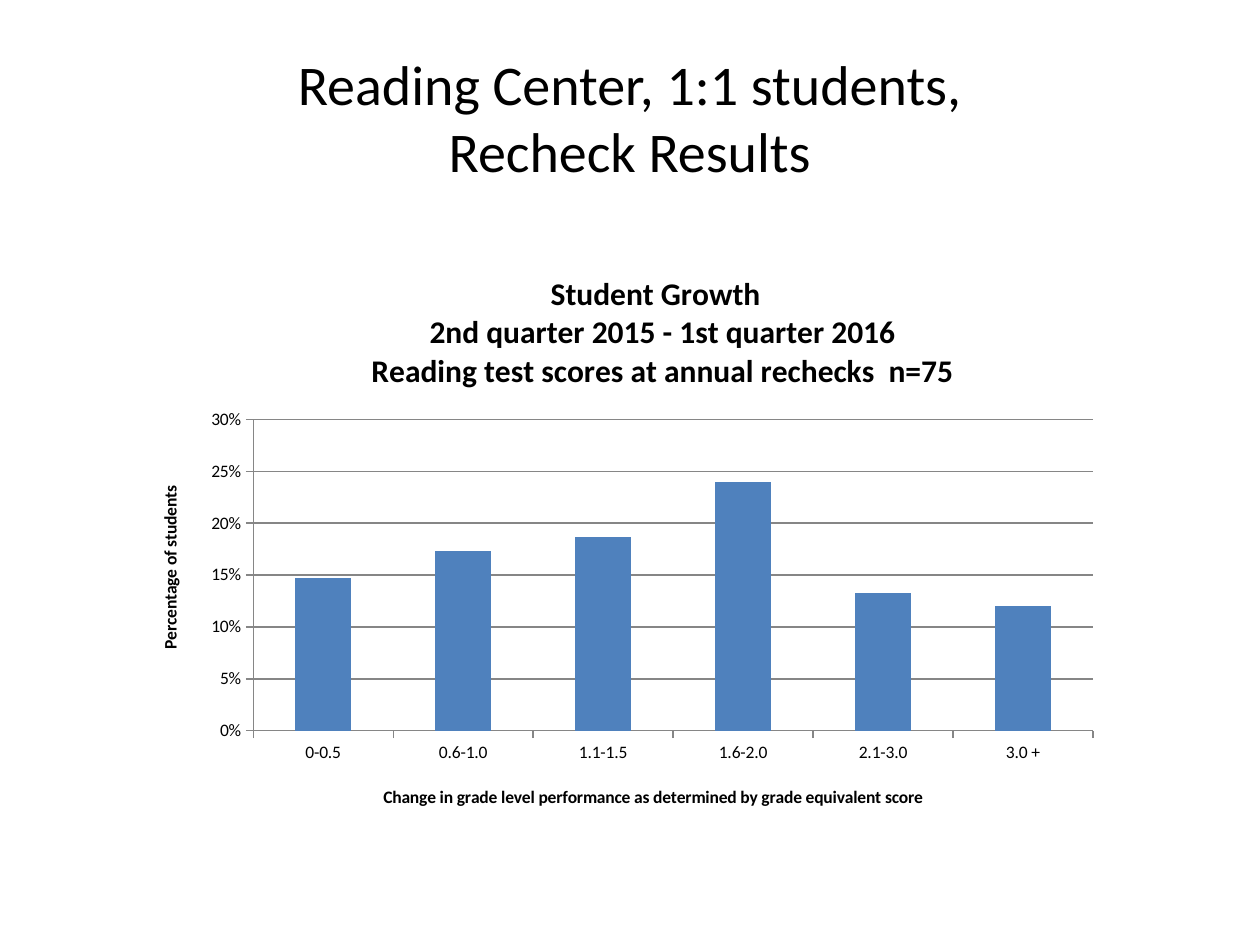
from lxml import etree
from pptx import Presentation
from pptx.chart.data import CategoryChartData
from pptx.dml.color import RGBColor
from pptx.enum.chart import XL_CHART_TYPE, XL_TICK_MARK
from pptx.enum.text import MSO_ANCHOR, PP_ALIGN
from pptx.oxml.ns import qn
from pptx.util import Inches, Pt

FONT = "Calibri"
BLACK = RGBColor(0x00, 0x00, 0x00)
BLUE = RGBColor(0x4F, 0x81, 0xBD)
GRAY = RGBColor(0x86, 0x86, 0x86)

HEADING = ["Reading Center, 1:1 students,", "Recheck Results"]
CHART_TITLE = [
    "Student Growth ",
    " 2nd quarter 2015 - 1st quarter 2016",
    " Reading test scores at annual rechecks  n=75",
]
X_TITLE = "Change in grade level performance as determined by grade equivalent score"
Y_TITLE = "Percentage of students"
GROWTH = {
    "0-0.5": 0.147,
    "0.6-1.0": 0.173,
    "1.1-1.5": 0.187,
    "1.6-2.0": 0.24,
    "2.1-3.0": 0.133,
    "3.0 +": 0.12,
}


def style(font, size, bold=False):
    font.name, font.size, font.bold = FONT, Pt(size), bold
    font.color.rgb = BLACK


def write(tf, lines, size, bold=False):
    for i, line in enumerate(lines):
        p = tf.add_paragraph() if i else tf.paragraphs[0]
        p.alignment = PP_ALIGN.CENTER
        r = p.add_run()
        r.text = line
        style(r.font, size, bold)


def place(parent, index, **fractions):
    """Give a chart part a manual layout, in fractions of the chart's size."""
    for old in parent.findall(qn("c:layout")):
        parent.remove(old)
    layout = etree.Element(qn("c:layout"))
    manual = etree.SubElement(layout, qn("c:manualLayout"))
    if "w" in fractions:
        etree.SubElement(manual, qn("c:layoutTarget"), val="inner")
    for mode in ("xMode", "yMode"):
        etree.SubElement(manual, qn("c:" + mode), val="edge")
    for key, value in fractions.items():
        etree.SubElement(manual, qn("c:" + key), val=str(value))
    parent.insert(index, layout)


prs = Presentation()
prs.slide_width, prs.slide_height = Inches(10), Inches(7.5)
s = prs.slides.add_slide(prs.slide_layouts[6])

heading = s.shapes.add_textbox(Inches(0.5), Inches(0.3), Inches(9), Inches(1.25))
heading.text_frame.word_wrap = True
heading.text_frame.vertical_anchor = MSO_ANCHOR.MIDDLE
write(heading.text_frame, HEADING, 32)

data = CategoryChartData(number_format="0%")
data.categories = list(GROWTH)
data.add_series("Series 1", list(GROWTH.values()))
chart = s.shapes.add_chart(XL_CHART_TYPE.COLUMN_CLUSTERED, Inches(1.08), Inches(2),
                           Inches(7.75), Inches(4.58), data).chart
style(chart.font, 10)
chart.has_legend = False

plot = chart.plots[0]
plot.gap_width = 150
plot.vary_by_categories = False
fill = plot.series[0].format.fill
fill.solid()
fill.fore_color.rgb = BLUE

x_axis, y_axis = chart.category_axis, chart.value_axis
y_axis.minimum_scale, y_axis.maximum_scale, y_axis.major_unit = 0, 0.3, 0.05
y_axis.tick_labels.number_format = "0%"
y_axis.tick_labels.number_format_is_linked = False
y_axis.has_major_gridlines = True
for axis in (x_axis, y_axis):
    axis.major_tick_mark = XL_TICK_MARK.OUTSIDE
for part in (x_axis, y_axis, y_axis.major_gridlines):
    part.format.line.color.rgb = GRAY
    part.format.line.width = Pt(0.75)

titles = [
    (chart.chart_title, CHART_TITLE, 18, 0.23, 0.03),
    (x_axis.axis_title, [X_TITLE], 10, 0.25, 0.92),
    (y_axis.axis_title, [Y_TITLE], 10, 0.02, 0.4),
]
for title, lines, size, x, y in titles:
    write(title.text_frame, lines, size, bold=True)
    place(title.text_frame._txBody.getparent().getparent(), 1, x=x, y=y)
body = y_axis.axis_title.text_frame._txBody.find(qn("a:bodyPr"))
body.set("rot", "-5400000")
body.set("vert", "horz")
place(chart._chartSpace.chart.plotArea, 0, x=0.12, y=0.29, w=0.86, h=0.54)

prs.save("out.pptx")
